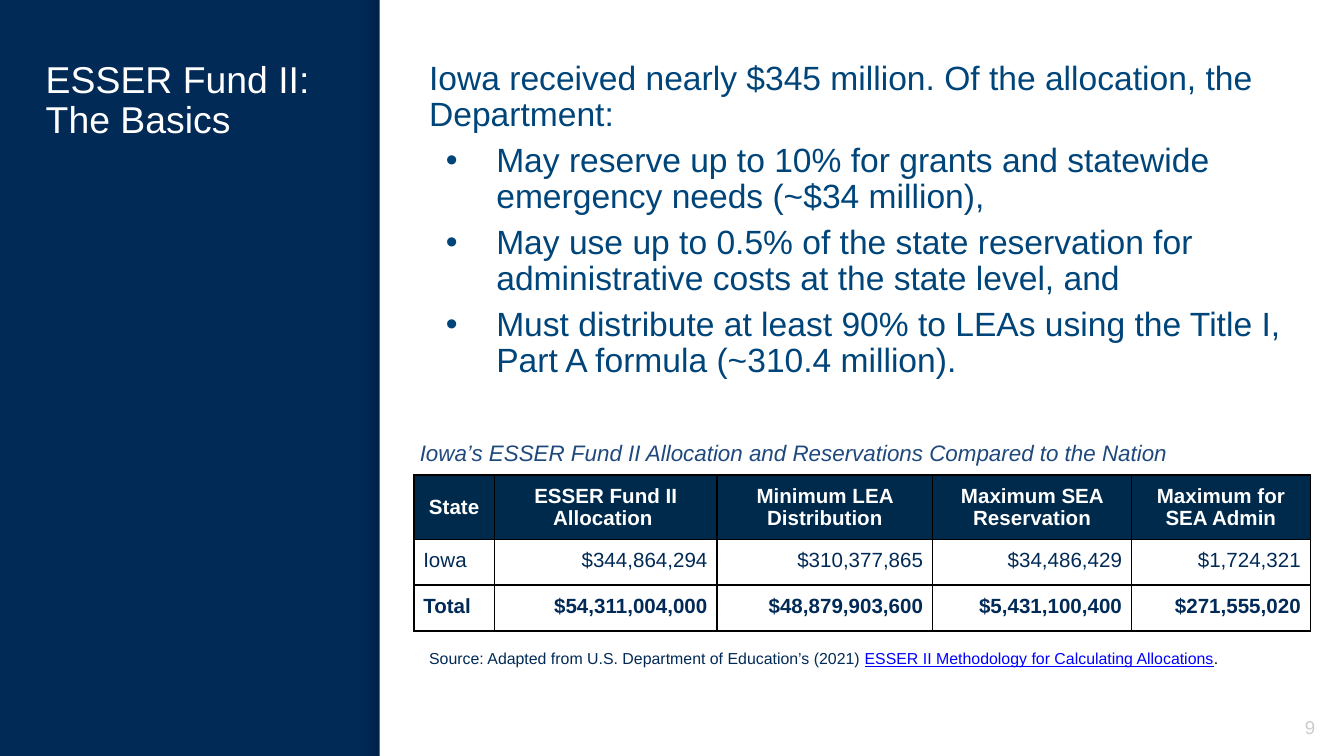
from dataclasses import dataclass

import pptx
import pptx.dml.color
import pptx.enum.shapes
import pptx.enum.text
import pptx.oxml
import pptx.oxml.ns
import pptx.util
from lxml import etree

Pt = pptx.util.Pt
Align = pptx.enum.text.PP_ALIGN
Anchor = pptx.enum.text.MSO_ANCHOR
PX = 4572  # 200 px to the inch
FONT = "Arial"
HEX = {
    "navy": "012A56", "shade": "000014", "white": "FFFFFF", "body": "00457A",
    "caption": "1F497D", "head": "002A4B", "line": "000000", "link": "0000FF",
    "page": "CCCCCC",
}


@dataclass
class Box:
    x: int
    y: int
    w: int
    h: int

    def emu(self) -> list[int]:
        return [v * PX for v in (self.x, self.y, self.w, self.h)]


@dataclass
class Style:
    size: float
    color: str
    bold: bool = False
    italic: bool = False
    under: bool = False


def rgb(name: str) -> pptx.dml.color.RGBColor:
    return pptx.dml.color.RGBColor.from_string(HEX[name])


def format_run(run, style: Style) -> None:
    font = run.font
    font.name, font.size = FONT, Pt(style.size)
    font.bold, font.italic, font.underline = style.bold, style.italic, style.under
    font.color.rgb = rgb(style.color)


def set_text(frame, text: str, style: Style, align=Align.LEFT) -> None:
    """Fill the frame, one paragraph to a line of text."""
    frame.text = text
    for para in frame.paragraphs:
        para.alignment = align
        for run in para.runs:
            format_run(run, style)


def set_frame(frame, pad: int, anchor) -> None:
    frame.word_wrap = True
    frame.auto_size = pptx.enum.text.MSO_AUTO_SIZE.NONE
    frame.vertical_anchor = anchor
    frame.margin_left = frame.margin_right = 20 * PX
    frame.margin_top = frame.margin_bottom = pad * PX


def add_text(slide, box: Box, pad: int = 20, anchor=Anchor.TOP):
    frame = slide.shapes.add_textbox(*box.emu()).text_frame
    set_frame(frame, pad, anchor)
    return frame


def add_rect(slide, box: Box):
    kind = pptx.enum.shapes.MSO_SHAPE.RECTANGLE
    rect = slide.shapes.add_shape(kind, *box.emu())
    rect.shadow.inherit = False
    rect.line.fill.background()
    return rect


def add_shade(slide, box: Box) -> None:
    """Add a strip that darkens from clear to 20 % at its right edge."""
    strip = add_rect(slide, box)
    strip.fill.gradient()
    strip.fill.gradient_angle = 0
    for stop in strip.fill.gradient_stops:
        stop.color.rgb = rgb("shade")
    tones = strip._element.spPr.iter(pptx.oxml.ns.qn("a:srgbClr"))
    for tone, alpha in zip(tones, ("0", "20000")):
        etree.SubElement(tone, pptx.oxml.ns.qn("a:alpha")).set("val", alpha)


def add_bullet(para) -> None:
    props = para._p.get_or_add_pPr()
    props.set("marL", str(100 * PX))
    props.set("indent", str(-75 * PX))
    ns = pptx.oxml.ns.nsdecls("a")
    for xml in (
        f'<a:buClr {ns}><a:srgbClr val="{HEX["body"]}"/></a:buClr>',
        f'<a:buFont {ns} typeface="{FONT}"/>',
        f'<a:buChar {ns} char="•"/>',
    ):
        props.append(pptx.oxml.parse_xml(xml))


def add_border(cell) -> None:
    props = cell._tc.get_or_add_tcPr()
    ns = pptx.oxml.ns.nsdecls("a")
    for spot, side in enumerate(("lnL", "lnR", "lnT", "lnB")):
        props.insert(spot, pptx.oxml.parse_xml(
            f'<a:{side} {ns} w="12700"><a:solidFill>'
            f'<a:srgbClr val="{HEX["line"]}"/></a:solidFill></a:{side}>'))


def add_grid(slide, box: Box, rows: list, wide: list[int], high: list[int]) -> None:
    table = slide.shapes.add_table(len(rows), len(wide), *box.emu()).table
    for col, width in zip(table.columns, wide):
        col.width = width * PX
    for row, height in zip(table.rows, high):
        row.height = height * PX
    for r, row in enumerate(rows):
        for c, text in enumerate(row):
            cell = table.cell(r, c)
            cell.margin_left = cell.margin_right = 14 * PX
            cell.margin_top = cell.margin_bottom = 14 * PX
            if r == 0:
                cell.fill.solid()
                cell.fill.fore_color.rgb = rgb("head")
                cell.vertical_anchor = Anchor.MIDDLE
                style = Style(11, "white", bold=True)
                align = Align.CENTER if c else Align.LEFT
            else:
                cell.fill.background()
                style = Style(11, "navy", bold=r == len(rows) - 1)
                align = Align.RIGHT if c else Align.LEFT
            set_text(cell.text_frame, text, style, align)
            add_border(cell)


BODY = [
    "Iowa received nearly $345 million. Of the allocation, the Department:",
    "May reserve up to 10% for grants and statewide emergency needs (~$34 million),",
    "May use up to 0.5% of the state reservation for administrative costs at the "
    "state level, and",
    "Must distribute at least 90% to LEAs using the Title I, Part A formula "
    "(~310.4 million).",
]
ROWS = [
    [" State", "ESSER Fund II Allocation ", "Minimum LEA Distribution",
     "Maximum SEA Reservation", "Maximum for SEA Admin"],
    ["Iowa", "$344,864,294", "$310,377,865", "$34,486,429", "$1,724,321"],
    ["Total", "$54,311,004,000", "$48,879,903,600", "$5,431,100,400", "$271,555,020"],
]
SOURCE = [
    ("Source: Adapted from U.S. Department of Education’s (2021) ", Style(8.5, "navy")),
    ("ESSER II Methodology for Calculating Allocations",
     Style(8.5, "link", under=True)),
    (".", Style(8.5, "line")),
]


def main() -> None:
    deck = pptx.Presentation()
    deck.slide_width, deck.slide_height = 2000 * PX, 1125 * PX
    slide = deck.slides.add_slide(deck.slide_layouts[5])
    slide.background.fill.solid()
    slide.background.fill.fore_color.rgb = rgb("navy")

    add_shade(slide, Box(540, 0, 25, 1125))
    panel = add_rect(slide, Box(565, 0, 1435, 1125))
    panel.fill.solid()
    panel.fill.fore_color.rgb = rgb("white")

    title = slide.shapes.title
    title.left, title.top, title.width, title.height = Box(48, 81, 464, 963).emu()
    set_frame(title.text_frame, 10, Anchor.TOP)
    set_text(title.text_frame, "ESSER Fund II: The Basics", Style(20, "white"))
    title.text_frame.paragraphs[0].line_spacing = 0.9

    body = add_text(slide, Box(619, 82, 1328, 512), pad=10)
    set_text(body, "\n".join(BODY), Style(18, "body"))
    for spot, para in enumerate(body.paragraphs):
        para.line_spacing, para.space_before = 0.9, Pt(5)
        if spot:
            add_bullet(para)

    caption = add_text(slide, Box(605, 634, 1342, 76))
    set_text(caption,
             "Iowa’s ESSER Fund II Allocation and Reservations Compared to the Nation",
             Style(12, "caption", italic=True))
    caption.paragraphs[0].space_after = Pt(10)
    add_grid(slide, Box(616, 707, 1334, 231), ROWS,
             [120, 331, 321, 296, 266], [95, 68, 68])

    source = add_text(slide, Box(619, 959, 1328, 42), anchor=Anchor.MIDDLE)
    for text, style in SOURCE:
        run = source.paragraphs[0].add_run()
        run.text = text
        format_run(run, style)

    page = add_text(slide, Box(1871, 1039, 106, 86), anchor=Anchor.MIDDLE)
    set_text(page, "9", Style(10, "page"), Align.RIGHT)
    deck.save("out.pptx")


if __name__ == "__main__":
    main()
